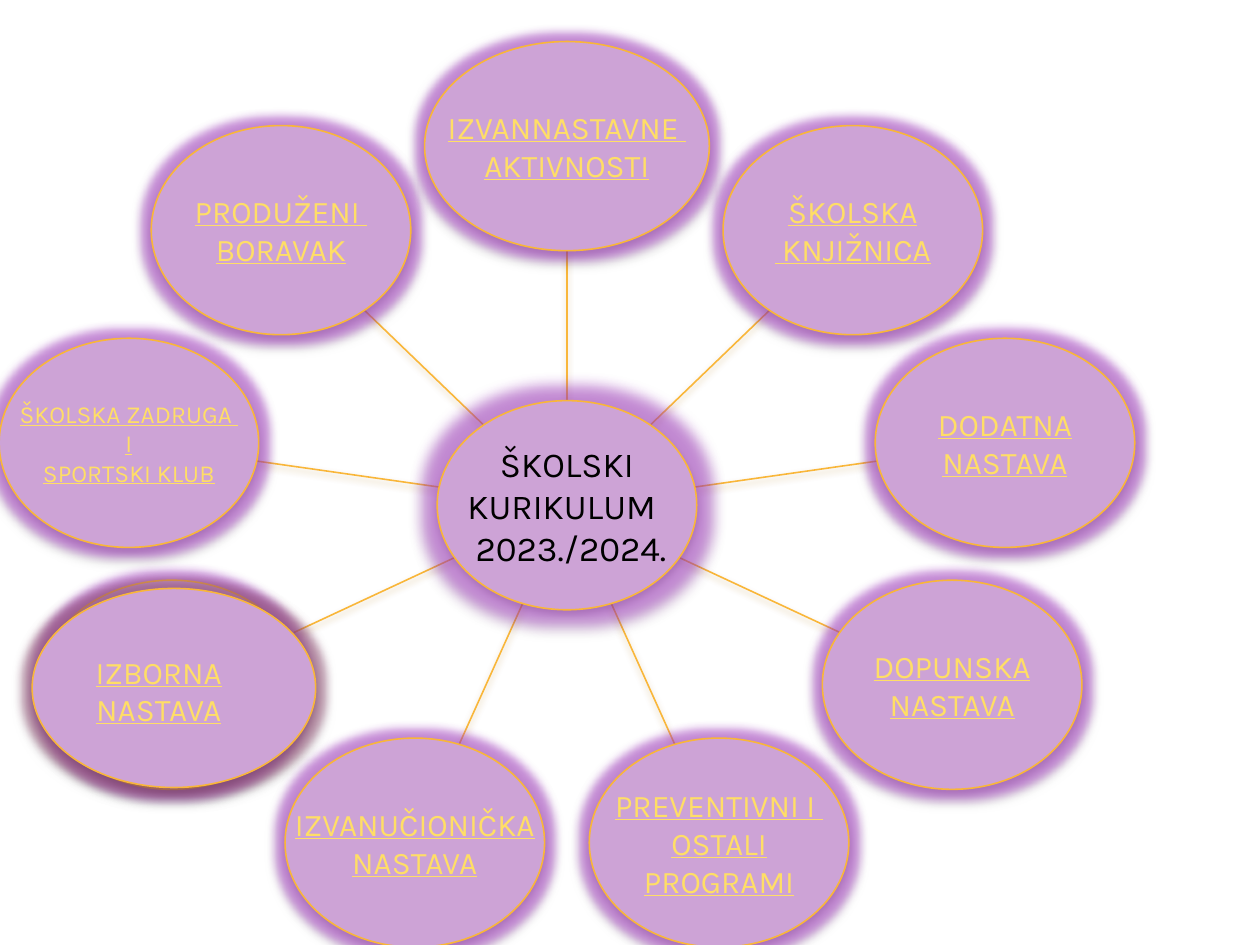
from dataclasses import dataclass
from math import cos, radians, sin

from pptx import Presentation
from pptx.dml.color import RGBColor as RGB
from pptx.enum.shapes import MSO_CONNECTOR as CXN, MSO_SHAPE as SHAPE
from pptx.enum.text import MSO_ANCHOR as ANCHOR, PP_ALIGN as ALIGN
from pptx.oxml import parse_xml
from pptx.oxml.ns import nsdecls
from pptx.util import Inches, Pt

PROGRAMS = [
    ["IZVANNASTAVNE ", "AKTIVNOSTI"],
    ["ŠKOLSKA", " KNJIŽNICA"],
    ["DODATNA", "NASTAVA"],
    ["DOPUNSKA", "NASTAVA"],
    ["PREVENTIVNI I ", "OSTALI", "PROGRAMI"],
    ["IZVANUČIONIČKA", "NASTAVA"],
    [],
    ["ŠKOLSKA ZADRUGA ", "I", "SPORTSKI KLUB"],
    ["PRODUŽENI ", "BORAVAK"],
]
HUB = ["ŠKOLSKI", "KURIKULUM", " 2023./2024."]
ELECTIVE = ["IZBORNA", "NASTAVA"]


@dataclass(frozen=True)
class Theme:
    font: str = "Karla"
    fill: str = "CDA3D6"
    line: str = "F9B639"
    link: str = "FFDE66"
    ink: str = "000000"
    line_shadow: str = "B07405"
    glow: str = "B03FD0"
    glow_dull: str = "9C4F7A"
    hub_size: int = 20
    size: int = 18
    small: int = 14
    line_width: float = 0.9


T = Theme()
W, H = 10, 7.5
CX, CY = 0.45 * W, 4.01
RX, RY = 3.53, 2.85
NODE_W, NODE_H = 2.06, 1.66
TOP_W = 2.26
STEP = 360 / len(PROGRAMS)
NUDGE = {6: -0.08}
SIZES = {7: T.small}


def add_effects(shape, shadow, alpha, glow=None, radius=0):
    halo = (f'<a:glow rad="{Pt(radius)}"><a:srgbClr val="{glow}">'
            '<a:alpha val="50000"/></a:srgbClr></a:glow>') if glow else ""
    shape._element.spPr.append(parse_xml(
        f'<a:effectLst {nsdecls("a")}>{halo}'
        f'<a:outerShdw blurRad="{Pt(4)}" dist="{Pt(2)}" dir="5400000" rotWithShape="0">'
        f'<a:srgbClr val="{shadow}"><a:alpha val="{alpha * 1000}"/></a:srgbClr>'
        '</a:outerShdw></a:effectLst>'))


def write(sp, lines, size=T.size, color=T.link, underline=True, aligns=None):
    tf = sp.text_frame
    for i, line in enumerate(lines):
        p = tf.paragraphs[0] if i == 0 else tf.add_paragraph()
        p.alignment = aligns[i] if aligns else ALIGN.CENTER
        r = p.add_run()
        r.text = line
        r.font.name, r.font.size, r.font.underline = T.font, Pt(size), underline
        r.font.color.rgb = RGB.from_string(color)


def add_oval(s, x, y, w=NODE_W, h=NODE_H, glow=T.glow, radius=10):
    sp = s.shapes.add_shape(SHAPE.OVAL, Inches(x - w / 2), Inches(y - h / 2),
                            Inches(w), Inches(h))
    sp.fill.solid()
    sp.fill.fore_color.rgb = RGB.from_string(T.fill)
    sp.line.color.rgb = RGB.from_string(T.line)
    sp.line.width = Pt(T.line_width)
    add_effects(sp, T.ink, 35, glow, radius)
    tf = sp.text_frame
    tf.margin_left = tf.margin_right = tf.margin_top = tf.margin_bottom = 0
    tf.word_wrap, tf.vertical_anchor = False, ANCHOR.MIDDLE
    return sp


def add_spoke(s, dx, dy):
    near = NODE_H / 2 / RY
    ends = [Inches(v) for k in (near, 1 - near) for v in (CX + k * dx, CY + k * dy)]
    c = s.shapes.add_connector(CXN.STRAIGHT, *ends)
    c.line.color.rgb = RGB.from_string(T.line)
    c.line.width = Pt(T.line_width)
    add_effects(c, T.line_shadow, 38)


def main():
    prs = Presentation()
    prs.slide_width, prs.slide_height = Inches(W), Inches(H)
    s = prs.slides.add_slide(prs.slide_layouts[6])

    for i in reversed(range(len(PROGRAMS))):
        angle = radians(i * STEP)
        dx, dy = RX * sin(angle), -RY * cos(angle)
        add_spoke(s, dx, dy)
        sp = add_oval(s, CX + dx + NUDGE.get(i, 0), CY + dy, w=NODE_W if i else TOP_W)
        write(sp, PROGRAMS[i], size=SIZES.get(i, T.size))

    hub = add_oval(s, CX, CY, radius=16)
    write(hub, HUB, size=T.hub_size, color=T.ink, underline=False,
          aligns=[ALIGN.CENTER, ALIGN.LEFT, ALIGN.LEFT])

    add_oval(s, 1.38, 5.46, w=2.25, h=1.58, glow=T.glow_dull)
    box = s.shapes.add_textbox(Inches(0.42), Inches(5.13), Inches(1.68), Inches(0.71))
    box.text_frame.word_wrap = True
    write(box, ELECTIVE)

    prs.save("out.pptx")


if __name__ == "__main__":
    main()
